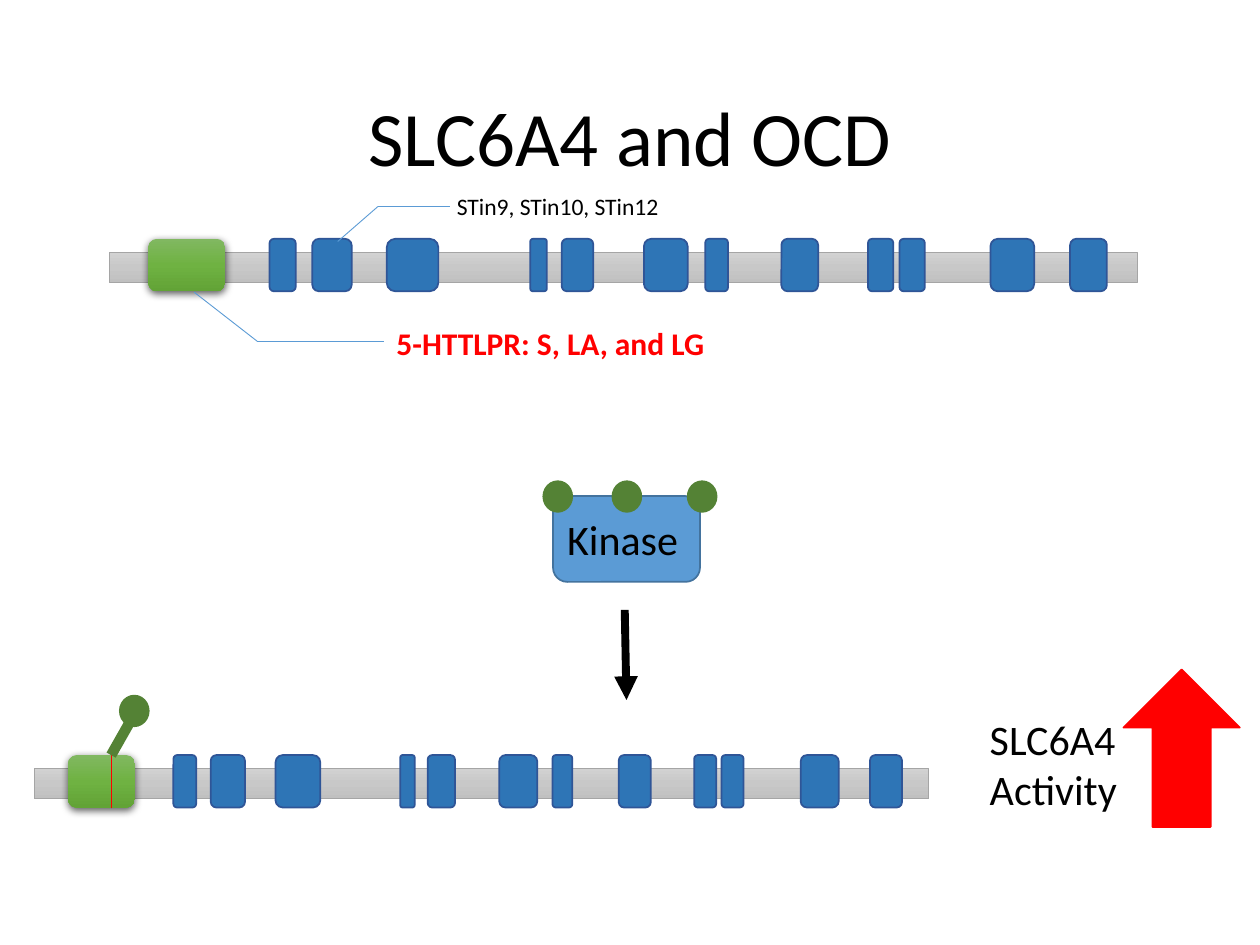
from copy import deepcopy

from lxml.etree import SubElement
from pptx import Presentation
from pptx.dml.color import RGBColor
from pptx.enum.shapes import MSO_CONNECTOR, MSO_SHAPE as SHAPE
from pptx.enum.text import MSO_ANCHOR as ANCHOR, PP_ALIGN as ALIGN
from pptx.oxml.ns import qn
from pptx.util import Pt

FONT = "Calibri"
COLORS = {
    "black": "000000", "red": "FF0000",
    "exon": "2E75B6", "exon_line": "2F5597",
    "kinase": "5B9BD5", "kinase_line": "43739E",
    "phosphate": "548235", "bar_line": "A5A5A5",
}
BAR_FILL = ["D2D2D2", "C8C8C8", "C0C0C0"]
PROMOTER_FILL = ["81B861", "6FB242", "62A336"]

# Gene layout: offsets from the left end of the bar, and widths
BAR_WIDTH = 587.5
PROMOTER = (22.25, 44)
EXONS = [
    (91.5, 15), (116, 22.5), (158.5, 29.5), (240.5, 9.5), (258.5, 18),
    (305.5, 25), (340.5, 13), (384, 21), (433.5, 14.5), (451.5, 14.5),
    (503.5, 25), (549, 21),
]
BLOCK_HEIGHT, BAR_HEIGHT = 30, 17.5
DOT_W, DOT_H = 16.5, 17.5


def rgb(name):
    return RGBColor.from_string(COLORS[name])


def add_block(shapes, kind, x, y, w, h, fill=None, line=None, weight=1):
    s = shapes.add_shape(kind, Pt(x), Pt(y), Pt(w), Pt(h))
    s.shadow.inherit = False
    if fill:
        s.fill.solid()
        s.fill.fore_color.rgb = rgb(fill)
    if line:
        s.line.color.rgb = rgb(line)
        s.line.width = Pt(weight)
    else:
        s.line.fill.background()
    return s


def set_gradient(s, stops):
    """Vertical gradient with three evenly spaced stops."""
    s.fill.gradient()
    s.fill.gradient_angle = 270
    gs_list = s._element.spPr.find(".//" + qn("a:gsLst"))
    gs_list.insert(1, deepcopy(gs_list[0]))
    for i, (stop, color) in enumerate(zip(s.fill.gradient_stops, stops)):
        stop.color.rgb = RGBColor.from_string(color)
        stop.position = i / 2


def add_shadow(s):
    effects = s._element.spPr.find(qn("a:effectLst"))
    shadow = SubElement(effects, qn("a:outerShdw"), blurRad=str(Pt(4.5)),
                        dist=str(Pt(1.5)), dir="5400000", algn="ctr", rotWithShape="0")
    color = SubElement(shadow, qn("a:srgbClr"), val=COLORS["black"])
    SubElement(color, qn("a:alpha"), val="63000")


def add_line(shapes, start, end, color, weight=0.5, arrow=False):
    c = shapes.add_connector(MSO_CONNECTOR.STRAIGHT, *map(Pt, start + end))
    c.line.color.rgb = rgb(color)
    c.line.width = Pt(weight)
    if arrow:
        SubElement(c.line._get_or_add_ln(), qn("a:tailEnd"), type="triangle")
    SubElement(c._element.spPr, qn("a:effectLst"))


def add_text(shapes, x, y, w, h, lines, size, color="black", bold=False):
    tf = shapes.add_textbox(Pt(x), Pt(y), Pt(w), Pt(h)).text_frame
    tf.word_wrap = True
    for i, text in enumerate(lines):
        p = tf.paragraphs[0] if i == 0 else tf.add_paragraph()
        r = p.add_run()
        r.text = text
        r.font.name, r.font.size, r.font.bold = FONT, Pt(size), bold
        r.font.color.rgb = rgb(color)
    return tf


def add_dot(shapes, x, y):
    add_block(shapes, SHAPE.OVAL, x, y, DOT_W, DOT_H, "phosphate", "phosphate")


def add_gene(shapes, x, y, scale=1):
    """Gene bar with a promoter and exons; y is the top of the blocks."""
    group = shapes.add_group_shape().shapes
    bar = add_block(group, SHAPE.RECTANGLE, x, y + 7.5, BAR_WIDTH * scale,
                    BAR_HEIGHT, line="bar_line", weight=0.5)
    set_gradient(bar, BAR_FILL)
    offset, width = PROMOTER
    promoter = add_block(group, SHAPE.ROUNDED_RECTANGLE, x + offset * scale, y,
                         width * scale, BLOCK_HEIGHT)
    set_gradient(promoter, PROMOTER_FILL)
    add_shadow(promoter)
    for offset, width in EXONS:
        add_block(group, SHAPE.ROUNDED_RECTANGLE, x + offset * scale, y,
                  width * scale, BLOCK_HEIGHT, "exon", "exon_line")


def add_kinase(shapes):
    group = shapes.add_group_shape().shapes
    add_block(group, SHAPE.ROUNDED_RECTANGLE, 316, 283.5, 84, 49, "kinase", "kinase_line")
    add_text(group, 317, 290, 80.5, 36, ["Kinase"], 24)
    for x in (310.5, 350, 393):
        add_dot(group, x, 275)


def add_callout(shapes, points):
    for start, end in zip(points, points[1:]):
        add_line(shapes, start, end, "kinase")


def main():
    prs = Presentation()
    prs.slide_width, prs.slide_height = Pt(720), Pt(540)
    shapes = prs.slides.add_slide(prs.slide_layouts[6]).shapes

    # Title
    tf = add_text(shapes, 49.5, 29, 621, 104, ["SLC6A4 and OCD"], 44)
    tf.vertical_anchor = ANCHOR.MIDDLE
    tf.paragraphs[0].alignment = ALIGN.CENTER
    tf.paragraphs[0].line_spacing = 0.9

    # Upper gene with its variants
    add_gene(shapes, 62.5, 136.5)
    add_callout(shapes, [(193, 138), (216, 118), (257, 118)])
    add_text(shapes, 254, 106, 152, 24, ["STin9, STin10, STin12"], 13.5)
    add_callout(shapes, [(111, 167), (147, 195), (219.5, 195)])
    add_text(shapes, 219.5, 181.5, 196.5, 29, ["5-HTTLPR: S, LA, and LG"], 18, "red", True)

    # Kinase
    add_kinase(shapes)

    # Lower gene, phosphorylated
    add_gene(shapes, 19.5, 431.5, 0.87)
    add_line(shapes, (63.5, 462), (63.5, 431.5), "red")
    add_line(shapes, (63.5, 431.5), (78, 406), "phosphate", 6)
    add_dot(shapes, 68.5, 397.5)

    # Resulting activity
    add_text(shapes, 558.5, 404, 93.5, 65.5, ["SLC6A4", "Activity"], 24)
    add_block(shapes, SHAPE.UP_ARROW, 642, 382.5, 66.5, 90, "red", "red")
    add_line(shapes, (357, 348.5), (358, 400), "black", 4.5, arrow=True)

    prs.save("out.pptx")


if __name__ == "__main__":
    main()
